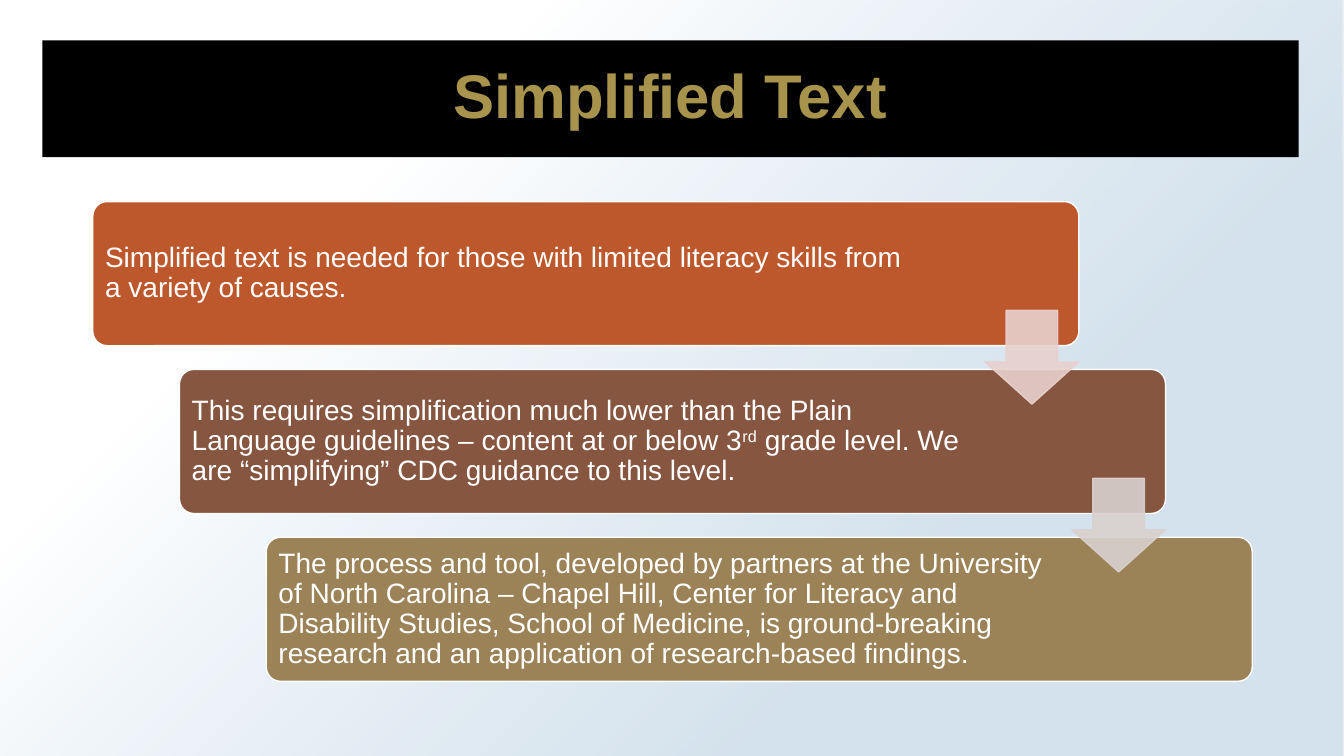
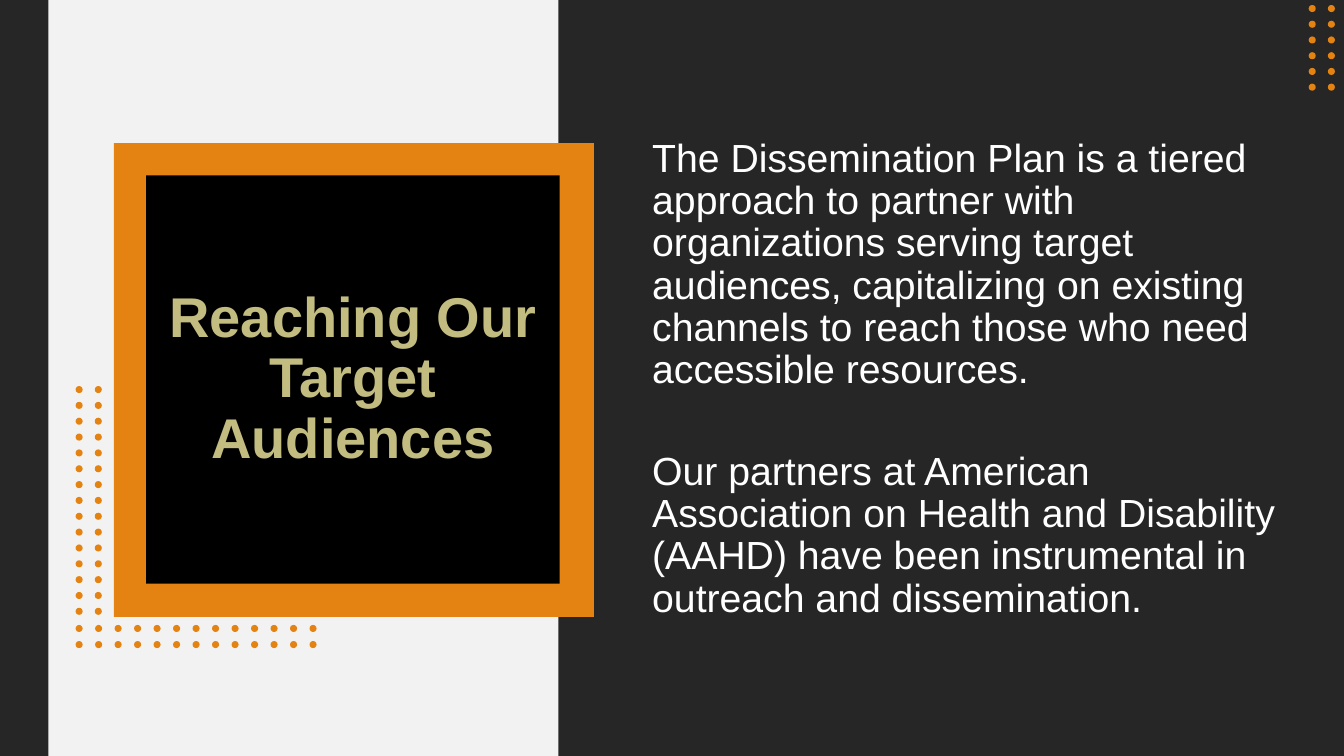
import pptx
import pptx.util
import pptx.dml.color
import pptx.enum.shapes
import pptx.enum.text
import pptx.oxml
import pptx.oxml.ns

Inches = pptx.util.Inches
Pt = pptx.util.Pt
RGB = pptx.dml.color.RGBColor
SHAPE = pptx.enum.shapes.MSO_SHAPE
ALIGN = pptx.enum.text.PP_ALIGN
MIDDLE = pptx.enum.text.MSO_ANCHOR.MIDDLE
qn = pptx.oxml.ns.qn

FONT = "Arial"
WIDE, HIGH = 13.33, 7.5
WHITE = RGB(0xFF, 0xFF, 0xFF)
BLACK = RGB(0, 0, 0)
SKY = RGB(0xCC, 0xDD, 0xEA)
GOLD = RGB(0xA7, 0x93, 0x4B)
KHAKI = RGB(0xC2, 0xBC, 0x80)
DARK = RGB(0x26, 0x26, 0x26)
PALE = RGB(0xF2, 0xF2, 0xF2)
ORANGE = RGB(0xE4, 0x83, 0x12)
RUST = RGB(0xBD, 0x58, 0x2C)
BROWN = RGB(0x86, 0x56, 0x40)
TAN = RGB(0x9B, 0x83, 0x57)
PINK = RGB(0xE8, 0xD1, 0xCD)
GREY = RGB(0xD9, 0xD1, 0xCF)

# Fill, text, room kept free on the right, arrow to the next card.
# Text parts alternate between normal and raised.
STEPS = [
    (RUST, ["Simplified text is needed for those with limited literacy skills "
            "from a variety of causes."], 1.55, PINK),
    (BROWN, ["This requires simplification much lower than the Plain Language "
             "guidelines – content at or below 3", "rd",
             " grade level. We are “simplifying” CDC guidance to this level."],
     1.88, GREY),
    (TAN, ["The process and tool, developed by partners at the University of "
           "North Carolina – Chapel Hill, Center for Literacy and Disability "
           "Studies, School of Medicine, is ground-breaking research and an "
           "application of research-based findings."], 1.88, None),
]
PLAN = [
    "The Dissemination Plan is a tiered approach to partner with organizations "
    "serving target audiences, capitalizing on existing channels to reach "
    "those who need accessible resources.",
    "Our partners at American Association on Health and Disability (AAHD) have "
    "been instrumental in outreach and dissemination.",
]


def style(thing, **values):
    for name, value in values.items():
        setattr(thing, name, value)


def place(shape, box):
    names = ("left", "top", "width", "height")
    style(shape, **dict(zip(names, map(Inches, box))))


def shape(home, kind, box, fill, line=None):
    item = home.shapes.add_shape(kind, *map(Inches, box))
    item.shadow.inherit = False
    item.fill.solid()
    item.fill.fore_color.rgb = fill
    if line is None:
        item.line.fill.background()
    else:
        item.line.color.rgb = line
        item.line.width = Pt(1)
    return item


def write(para, parts, size, color, **look):
    """Write parts as runs, raising every second one."""
    style(para, line_spacing=0.9, **look)
    for place_no, part in enumerate(parts):
        run = para.add_run()
        run.text = part
        style(run.font, name=FONT, size=Pt(size))
        run.font.color.rgb = color
        if place_no % 2:
            run.font._element.set("baseline", "30000")


def title(slide, box, text, size, color):
    head = slide.shapes.title
    slide.shapes._spTree.append(head._element)
    place(head, box)
    head.fill.solid()
    head.fill.fore_color.rgb = BLACK
    frame = head.text_frame
    style(frame, word_wrap=True, vertical_anchor=MIDDLE)
    para = frame.paragraphs[0]
    write(para, [text], size, color, alignment=ALIGN.CENTER)
    para.runs[0].font.bold = True


def glow(slide, box):
    """Draw a backdrop that fades from the lower right corner."""
    back = shape(slide, SHAPE.RECTANGLE, box, WHITE)
    old = back._element.spPr.find(qn("a:solidFill"))
    new = pptx.oxml.parse_xml(
        '<a:gradFill xmlns:a="http://schemas.openxmlformats.org/drawingml/2006/main"'
        ' rotWithShape="1"><a:gsLst>'
        f'<a:gs pos="28000"><a:srgbClr val="{SKY}"><a:alpha val="84000"/></a:srgbClr></a:gs>'
        f'<a:gs pos="74000"><a:srgbClr val="{WHITE}"/></a:gs></a:gsLst>'
        '<a:path path="circle"><a:fillToRect l="100000" t="100000"/></a:path>'
        '</a:gradFill>')
    back._element.spPr.replace(old, new)


def card(slide, box, fill, parts, room):
    item = shape(slide, SHAPE.ROUNDED_RECTANGLE, box, fill, WHITE)
    item.adjustments[0] = 0.1
    frame = item.text_frame
    edge = Inches(0.08)
    style(frame, word_wrap=True, vertical_anchor=MIDDLE, margin_left=edge,
          margin_top=edge, margin_bottom=edge, margin_right=Inches(room))
    write(frame.paragraphs[0], parts, 20, WHITE, alignment=ALIGN.LEFT)


def arrow(slide, box, color):
    item = shape(slide, SHAPE.DOWN_ARROW, box, color, color)
    item.adjustments[0], item.adjustments[1] = 0.55, 0.45
    for tint in item._element.spPr.iter(qn("a:srgbClr")):
        tint.append(tint.makeelement(qn("a:alpha"), {"val": "90000"}))


def stairs(slide, box):
    """Set the cards as a falling stair, with arrows on top."""
    left, top, width, height = box
    wide, high, side = 9.78, 1.43, 0.93
    last = len(STEPS) - 1
    spots = [(left + i * (width - wide) / last, top + i * (height - high) / last)
             for i in range(len(STEPS))]
    for (x, y), (fill, parts, room, _) in zip(spots, STEPS):
        card(slide, (x, y, wide, high), fill, parts, room)
    for (x, y), (_, _, _, color) in zip(spots, STEPS):
        if color is not None:
            arrow(slide, (x + wide - side, y + 1.08, side, side), color)


def dots(slide, box, cols, rows):
    """Spread a grid of dots evenly over the box."""
    left, top, width, height = box
    size = 0.07
    group = slide.shapes.add_group_shape()
    for col in range(cols):
        for row in range(rows):
            x = left + col * (width - size) / (cols - 1)
            y = top + row * (height - size) / (rows - 1)
            shape(group, SHAPE.OVAL, (x, y, size, size), ORANGE)


def prose(slide, box, texts):
    frame = slide.shapes.add_textbox(*map(Inches, box)).text_frame
    style(frame, word_wrap=True, vertical_anchor=MIDDLE)
    for i, text in enumerate(texts):
        para = frame.add_paragraph() if i else frame.paragraphs[0]
        write(para, [text], 28, WHITE, space_before=Pt(36 if i else 0),
              space_after=Pt(6))


def simple(slide):
    glow(slide, (0, 0, WIDE, HIGH))
    title(slide, (0.42, 0.4, 12.46, 1.16), "Simplified Text", 44, GOLD)
    stairs(slide, (0.92, 2, 11.5, 4.76))


def reach(slide):
    for box, fill in (((0, 0, WIDE, HIGH), DARK),
                      ((0.48, 0, 5.06, HIGH), PALE),
                      ((1.13, 1.42, 4.76, 4.7), ORANGE)):
        shape(slide, SHAPE.RECTANGLE, box, fill)
    title(slide, (1.45, 1.74, 4.1, 4.05), "Reaching Our Target Audiences", 40, KHAKI)
    dots(slide, (12.98, 0.05, 0.26, 0.85), 2, 6)
    dots(slide, (0.75, 3.83, 0.26, 2.27), 2, 15)
    dots(slide, (0.75, 6.2, 2.39, 0.23), 13, 2)
    prose(slide, (6.37, 0.43, 6.48, 6.67), PLAN)


def main():
    deck = pptx.Presentation()
    style(deck, slide_width=Inches(WIDE), slide_height=Inches(HIGH))
    for build in (simple, reach):
        build(deck.slides.add_slide(deck.slide_layouts[5]))
    deck.save("out.pptx")


if __name__ == "__main__":
    main()
